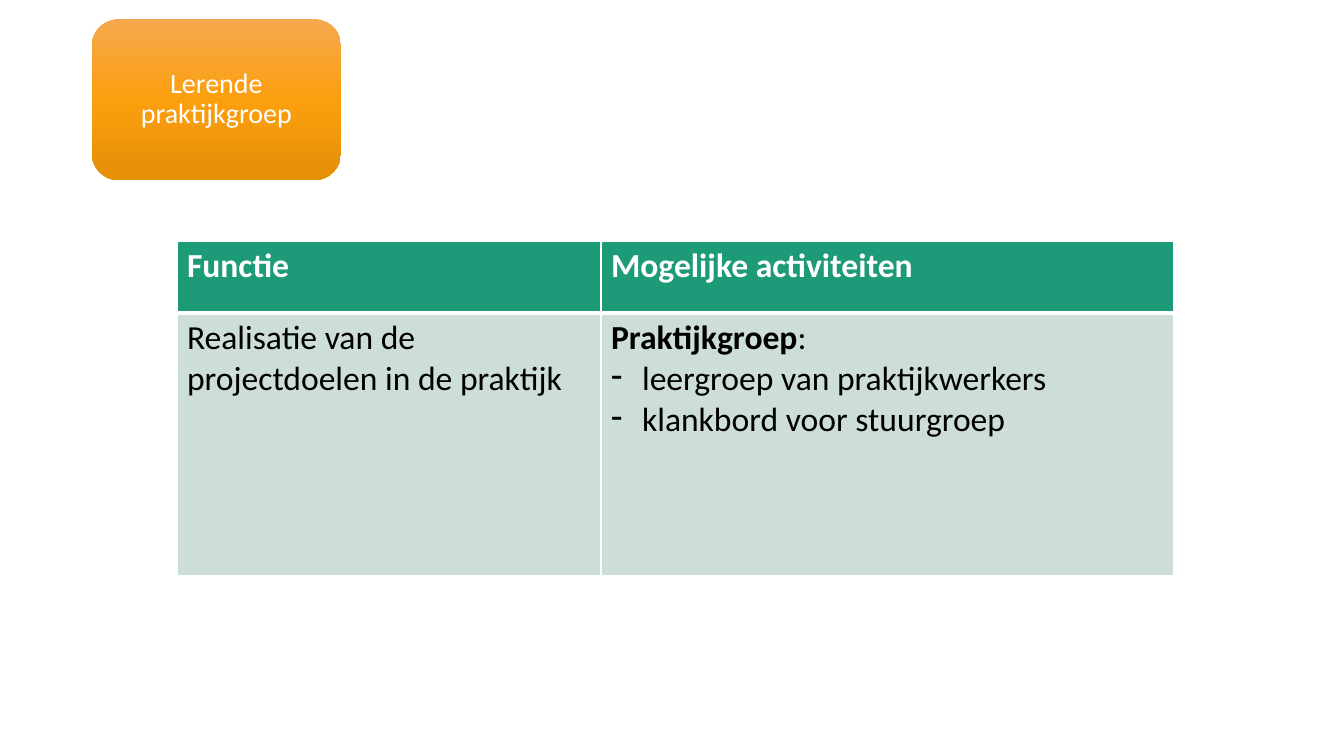
from lxml.etree import SubElement
from pptx import Presentation
from pptx.dml.color import RGBColor
from pptx.enum.shapes import MSO_SHAPE as SHAPE
from pptx.enum.text import MSO_ANCHOR as ANCHOR, PP_ALIGN as ALIGN
from pptx.oxml import parse_xml
from pptx.oxml.ns import nsdecls, qn
from pptx.util import Pt

PX = 914400 / 100.8
WHITE, BLACK, GREEN, PALE = "FFFFFF", "000000", "1D9A78", "CDDED6"
ORANGES = [(0, "F5A84E"), (50, "FC9F0E"), (100, "E58F07")]
COLUMNS, ROWS = [424, 573], [72, 263]
HEADER = {"size": Pt(24), "name": "Calibri", "bold": True}
BODY = HEADER | {"bold": False}
LABEL = BODY | {"size": Pt(20)}
CELLS = [
    [[[("Functie", True)]], [[("Mogelijke activiteiten", True)]]],
    [
        [[("Realisatie van de projectdoelen in de praktijk", False)]],
        [
            [("Praktijkgroep", True), (":", False)],
            [("- leergroep van praktijkwerkers", False)],
            [("- klankbord voor stuurgroep", False)],
        ],
    ],
]


def px(n):
    return round(n * PX)


def color(value):
    return RGBColor.from_string(value)


def set_attrs(obj, values):
    for name, value in values.items():
        setattr(obj, name, value)


def add_run(p, text, fmt, font_color):
    r = p.add_run()
    r.text = text
    set_attrs(r.font, fmt)
    r.font.color.rgb = color(font_color)


def set_gradient(s, stops):
    s.fill.background()
    sp_pr = s.fill._xPr
    gs = "".join(
        f'<a:gs pos="{pos * 1000}"><a:srgbClr val="{value}"/></a:gs>'
        for pos, value in stops
    )
    grad = parse_xml(
        f'<a:gradFill {nsdecls("a")} rotWithShape="1"><a:gsLst>{gs}</a:gsLst>'
        '<a:lin ang="5400000" scaled="0"/></a:gradFill>'
    )
    sp_pr.replace(sp_pr.find(qn("a:noFill")), grad)


def set_border(cell, side, points):
    tc_pr = cell._tc.get_or_add_tcPr()
    ln = SubElement(tc_pr, qn(f"a:ln{side}"), w=str(Pt(points)))
    fill = SubElement(ln, qn("a:solidFill"))
    SubElement(fill, qn("a:srgbClr"), val=WHITE)


def set_bullet(p, char, indent):
    p_pr = p._p.get_or_add_pPr()
    p_pr.set("marL", str(indent))
    p_pr.set("indent", str(-indent))
    SubElement(p_pr, qn("a:buChar"), char=char)


def add_label(slide, x, y, w, h):
    s = slide.shapes.add_shape(SHAPE.ROUNDED_RECTANGLE, px(x), px(y), px(w), px(h))
    s.shadow.inherit = False
    s.line.fill.background()
    set_gradient(s, ORANGES)
    tf = s.text_frame
    sides = ("left", "top", "right", "bottom")
    set_attrs(tf, {f"margin_{side}": px(8) for side in sides})
    set_attrs(tf, {"word_wrap": True, "vertical_anchor": ANCHOR.MIDDLE})
    p = tf.paragraphs[0]
    set_attrs(p, {"alignment": ALIGN.CENTER, "line_spacing": 0.9})
    add_run(p, "Lerende praktijkgroep", LABEL, WHITE)


def fill_cell(cell, paragraphs, is_header):
    widths = {"L": 1, "R": 1, "T": 1 if is_header else 3, "B": 3 if is_header else 1}
    for side, points in widths.items():
        set_border(cell, side, points)
    cell.fill.solid()
    cell.fill.fore_color.rgb = color(GREEN if is_header else PALE)
    tf = cell.text_frame
    for i, runs in enumerate(paragraphs):
        p = tf.paragraphs[0] if i == 0 else tf.add_paragraph()
        if runs[0][0].startswith("- "):
            set_bullet(p, "-", px(31))
        for text, bold in runs:
            fmt = HEADER if bold else BODY
            add_run(p, text.removeprefix("- "), fmt, WHITE if is_header else BLACK)


def add_activities(slide, x, y, w, h):
    frame = slide.shapes.add_table(
        len(ROWS), len(COLUMNS), px(x), px(y), px(w), px(h)
    )
    table = frame.table
    for column, width in zip(table.columns, COLUMNS):
        column.width = px(width)
    for row, height in zip(table.rows, ROWS):
        row.height = px(height)
    for i, row in enumerate(CELLS):
        for j, paragraphs in enumerate(row):
            fill_cell(table.cell(i, j), paragraphs, i == 0)


def main():
    prs = Presentation()
    set_attrs(prs, {"slide_width": px(1344), "slide_height": px(756)})
    slide = prs.slides.add_slide(prs.slide_layouts[6])
    add_label(slide, 92, 19, 249, 161)
    add_activities(slide, 177, 241, sum(COLUMNS), sum(ROWS))
    prs.save("out.pptx")


if __name__ == "__main__":
    main()
